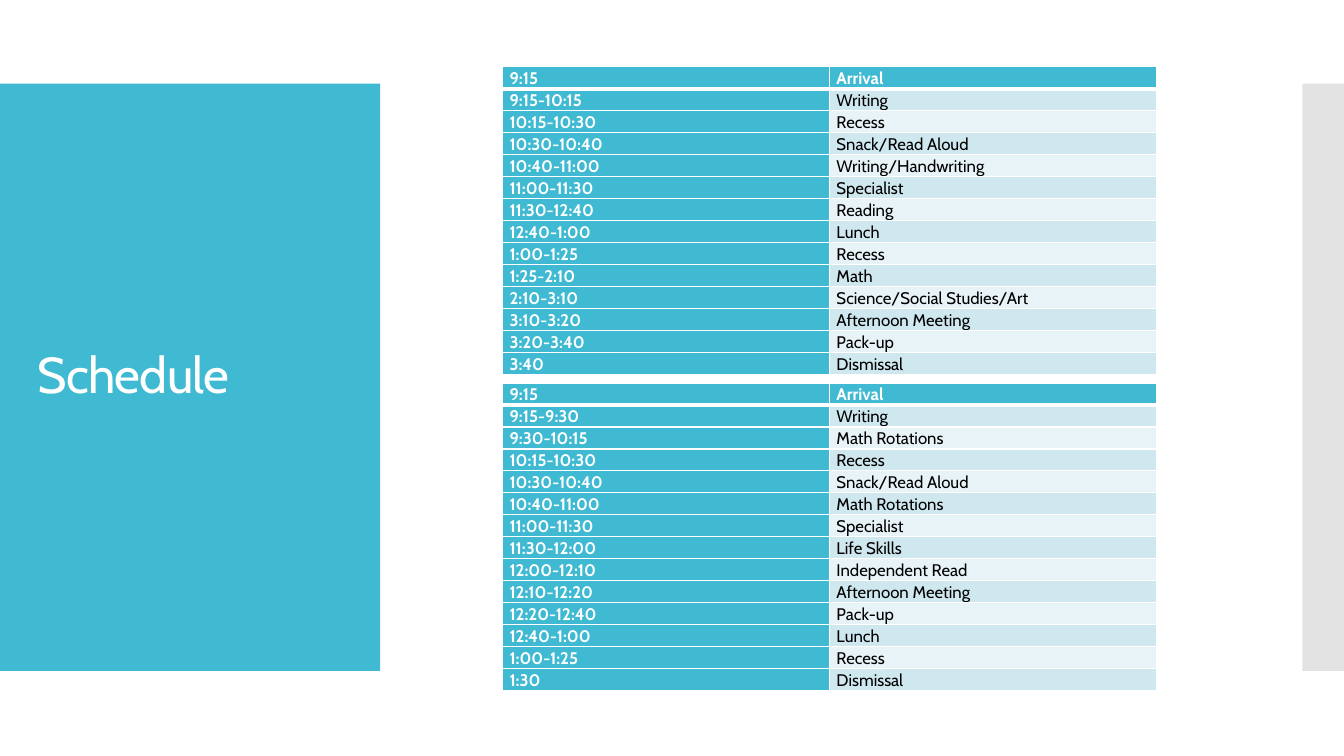
import pptx
import pptx.util
import pptx.dml.color
import pptx.enum.shapes
import pptx.enum.text
import pptx.oxml
import pptx.oxml.ns
import lxml.etree

Cm = pptx.util.Cm
Pt = pptx.util.Pt
TEAL, WHITE, BLACK = "40BAD2", "FFFFFF", "000000"
BANDS = ["E8F3F7", "CFE7EE"]


def paint(thing, color):
    """Give a shape or cell a solid fill."""
    thing.fill.solid()
    thing.fill.fore_color.rgb = pptx.dml.color.RGBColor.from_string(color)


def style(para, color, space, **form):
    """Set line spacing and font of a paragraph."""
    para.line_spacing = space
    for run in para.runs:
        run.font.color.rgb = pptx.dml.color.RGBColor.from_string(color)
        for key, value in {"name": "Cabin", **form}.items():
            setattr(run.font, key, value)


deck = pptx.Presentation()
deck.slide_width, deck.slide_height = Cm(33.87), Cm(19.05)
slide = deck.slides.add_slide(deck.slide_layouts[5])

# Side panels, behind the title
title = slide.shapes.title
for left, width, color in [(0, 9.58, TEAL), (32.82, 1.05, "C8C8C8")]:
    panel = slide.shapes.add_shape(
        pptx.enum.shapes.MSO_SHAPE.RECTANGLE,
        Cm(left), Cm(2.11), Cm(width), Cm(14.8))
    panel.shadow.inherit = False
    panel.line.fill.background()
    paint(panel, color)
    title.element.addprevious(panel.element)
tint = panel.element.find(".//" + pptx.oxml.ns.qn("a:srgbClr"))
lxml.etree.SubElement(tint, pptx.oxml.ns.qn("a:alpha"), val="50000")

# Title
place = {"left": 0.7, "top": 3.12, "width": 8.18, "height": 12.78}
for key, value in place.items():
    setattr(title, key, Cm(value))
title.text_frame.text = "Schedule"
title.text_frame.word_wrap = True
title.text_frame.vertical_anchor = pptx.enum.text.MSO_ANCHOR.MIDDLE
head = title.text_frame.paragraphs[0]
head.alignment = pptx.enum.text.PP_ALIGN.LEFT
style(head, WHITE, 0.9, size=Pt(36))
head.runs[0].font._element.set("spc", "-60")

# Schedules
full_day = [
    ("9:15", "Arrival"),
    ("9:15-10:15", "Writing"),
    ("10:15-10:30", "Recess"),
    ("10:30-10:40", "Snack/Read Aloud"),
    ("10:40-11:00", "Writing/Handwriting"),
    ("11:00-11:30", "Specialist"),
    ("11:30-12:40", "Reading"),
    ("12:40-1:00", "Lunch"),
    ("1:00-1:25", "Recess"),
    ("1:25-2:10", "Math"),
    ("2:10-3:10", "Science/Social Studies/Art"),
    ("3:10-3:20", "Afternoon Meeting"),
    ("3:20-3:40", "Pack-up"),
    ("3:40", "Dismissal"),
]
short_day = [
    ("9:15", "Arrival"),
    ("9:15-9:30", "Writing"),
    ("9:30-10:15", "Math Rotations"),
    ("10:15-10:30", "Recess"),
    ("10:30-10:40", "Snack/Read Aloud"),
    ("10:40-11:00", "Math Rotations"),
    ("11:00-11:30", "Specialist"),
    ("11:30-12:00", "Life Skills"),
    ("12:00-12:10", "Independent Read"),
    ("12:10-12:20", "Afternoon Meeting"),
    ("12:20-12:40", "Pack-up"),
    ("12:40-1:00", "Lunch"),
    ("1:00-1:25", "Recess"),
    ("1:30", "Dismissal"),
]
inset = {"margin_left": Cm(0.18), "margin_right": Cm(0.18),
         "margin_top": 0, "margin_bottom": 0}
for top, plan in [(1.68, full_day), (9.65, short_day)]:
    table = slide.shapes.add_table(
        len(plan), 2, Cm(12.66), Cm(top), Cm(16.48), Cm(7.76)).table
    for r, texts in enumerate(plan):
        table.rows[r].height = Cm(0.55)
        for c, text in enumerate(texts):
            cell = table.cell(r, c)
            cell.text = text
            for key, value in inset.items():
                setattr(cell, key, value)
            strong = r == 0 or c == 0
            style(cell.text_frame.paragraphs[0], WHITE if strong else BLACK,
                  1.07, size=Pt(12), bold=strong)
            widths = {"L": 1, "R": 1, "T": 3 if r == 1 else 1,
                      "B": 3 if r == 0 else 1}
            for side, width in widths.items():
                cell._tc.get_or_add_tcPr().append(pptx.oxml.parse_xml(
                    f'<a:ln{side} {pptx.oxml.ns.nsdecls("a")} w="{Pt(width)}">'
                    f'<a:solidFill><a:srgbClr val="{WHITE}"/></a:solidFill>'
                    f'</a:ln{side}>'))
            paint(cell, TEAL if strong else BANDS[r % 2])

deck.save("out.pptx")
